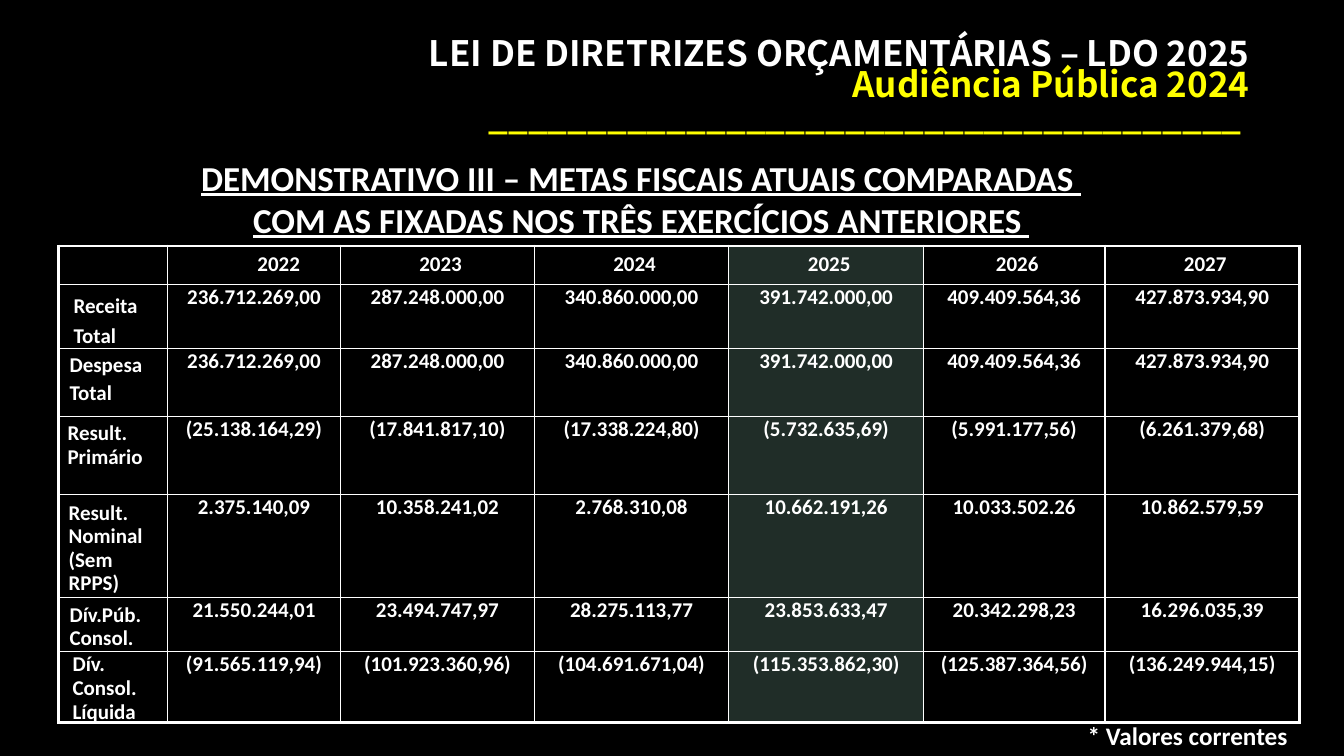
from lxml import etree
from pptx import Presentation
from pptx.dml.color import RGBColor
from pptx.enum import text
from pptx.oxml import ns
from pptx.util import Inches, Pt

WHITE, YELLOW, BLACK, HIGHLIGHT = "FFFFFF", "FFFF00", "000000", "202D28"
LEFT, CENTER, RIGHT = text.PP_ALIGN.LEFT, text.PP_ALIGN.CENTER, text.PP_ALIGN.RIGHT


def color(hex_code):
    return RGBColor.from_string(hex_code)


def write(frame, lines, size=15, font="Calibri", colors=(WHITE,), align=LEFT,
          spacing=None, underline=None):
    """One paragraph per line; the last colour serves all remaining lines."""
    for i, line in enumerate(lines):
        paragraph = frame.paragraphs[0] if i == 0 else frame.add_paragraph()
        paragraph.alignment = align
        paragraph.line_spacing = spacing
        run = paragraph.add_run()
        run.text = line
        run.font.size, run.font.name = Pt(size), font
        run.font.bold, run.font.underline = True, underline
        run.font.color.rgb = color(colors[min(i, len(colors) - 1)])


prs = Presentation()
prs.slide_width, prs.slide_height = Inches(13.33), Inches(7.5)
slide = prs.slides.add_slide(prs.slide_layouts[6])
slide.background.fill.solid()
slide.background.fill.fore_color.rgb = color(BLACK)

# Title
title = slide.shapes.add_textbox(Inches(0.99), Inches(0.34), Inches(11.5), Inches(1.45)).text_frame
title.word_wrap = True
title.vertical_anchor = text.MSO_ANCHOR.MIDDLE
title.margin_top, title.margin_bottom = 0, Inches(0.38)
write(title, ["LEI DE DIRETRIZES ORÇAMENTÁRIAS – LDO 2025", "Audiência Pública 2024", "_" * 38 + " "],
      size=25, font="Noto Sans CJK JP", colors=(WHITE, YELLOW), align=RIGHT, spacing=0.75)

# Table heading
heading = slide.shapes.add_textbox(Inches(0.77), Inches(1.5), Inches(11.18), Inches(0.94)).text_frame
heading.word_wrap = True
write(heading, ["DEMONSTRATIVO III – METAS FISCAIS ATUAIS COMPARADAS ",
                "COM AS FIXADAS NOS TRÊS EXERCÍCIOS ANTERIORES "],
      size=25, align=CENTER, underline=True)

# Fiscal targets
years = ["2022", "2023", "2024", "2025", "2026", "2027"]
# label, left margin, top margin, line spacing, values
targets = [
    ("Receita Total", 0.15, 0.04, 1.19,
     ["236.712.269,00", "287.248.000,00", "340.860.000,00",
      "391.742.000,00", "409.409.564,36", "427.873.934,90"]),
    ("Despesa Total", 0.11, 0.01, Pt(20.3),
     ["236.712.269,00", "287.248.000,00", "340.860.000,00",
      "391.742.000,00", "409.409.564,36", "427.873.934,90"]),
    ("Result. Primário", 0.09, 0.07, Pt(16.7),
     ["(25.138.164,29)", "(17.841.817,10)", "(17.338.224,80)",
      "(5.732.635,69)", "(5.991.177,56)", "(6.261.379,68)"]),
    ("Result. Nominal (Sem RPPS)", 0.1, 0.08, Pt(16.7),
     ["2.375.140,09", "10.358.241,02", "2.768.310,08",
      "10.662.191,26", "10.033.502.26", "10.862.579,59"]),
    ("Dív.Púb. Consol.", 0.11, 0.07, Pt(16.7),
     ["21.550.244,01", "23.494.747,97", "28.275.113,77",
      "23.853.633,47", "20.342.298,23", "16.296.035,39"]),
    ("Dív. Consol. Líquida", 0.14, 0.01, 0.93,
     ["(91.565.119,94)", "(101.923.360,96)", "(104.691.671,04)",
      "(115.353.862,30)", "(125.387.364,56)", "(136.249.944,15)"]),
]
col_widths = [1.08, 1.72, 1.92, 1.93, 1.93, 1.8, 1.93]
row_heights = [0.38, 0.64, 0.67, 0.78, 1.02, 0.47, 0.54]
last_row, last_col = len(targets), len(years)

table = slide.shapes.add_table(last_row + 1, last_col + 1, Inches(0.58), Inches(2.44),
                               Inches(sum(col_widths)), Inches(sum(row_heights))).table
table.first_row = table.horz_banding = False
for column, width in zip(table.columns, col_widths):
    column.width = Inches(width)
for row, height in zip(table.rows, row_heights):
    row.height = Inches(height)

# Cell frames: thin inside, thick outside, current year highlighted
for r in range(last_row + 1):
    for c in range(last_col + 1):
        cell = table.cell(r, c)
        cell.margin_left = cell.margin_top = cell.margin_right = cell.margin_bottom = 0
        properties = cell._tc.get_or_add_tcPr()
        outer_edges = {"lnL": c == 0, "lnR": c == last_col, "lnT": r == 0, "lnB": r == last_row}
        for edge, outer in outer_edges.items():
            line = etree.SubElement(properties, ns.qn("a:" + edge), w=str(Pt(2.25 if outer else 1)))
            fill = etree.SubElement(line, ns.qn("a:solidFill"))
            etree.SubElement(fill, ns.qn("a:srgbClr"), val=WHITE)
        if c > 0 and years[c - 1] == "2025":
            cell.fill.solid()
            cell.fill.fore_color.rgb = color(HIGHLIGHT)
        else:
            cell.fill.background()

# Year row
for c, year in enumerate(years, 1):
    cell = table.cell(0, c)
    cell.margin_left, cell.margin_top = Inches(0.49 if c == 1 else 0.06), Inches(0.05)
    write(cell.text_frame, [year], align=CENTER)

# Target rows
for r, (label, left, top, spacing, values) in enumerate(targets, 1):
    cell = table.cell(r, 0)
    cell.margin_left, cell.margin_top, cell.margin_right = Inches(left), Inches(top), Inches(0.1)
    write(cell.text_frame, [label], spacing=spacing)
    for c, value in enumerate(values, 1):
        write(table.cell(r, c).text_frame, [value], align=CENTER)

# Footnote
footnote = slide.shapes.add_textbox(Inches(10.69), Inches(7.1), Inches(2.2), Inches(0.4)).text_frame
footnote.word_wrap = False
write(footnote, ["* Valores correntes"], size=18)

prs.save("out.pptx")
